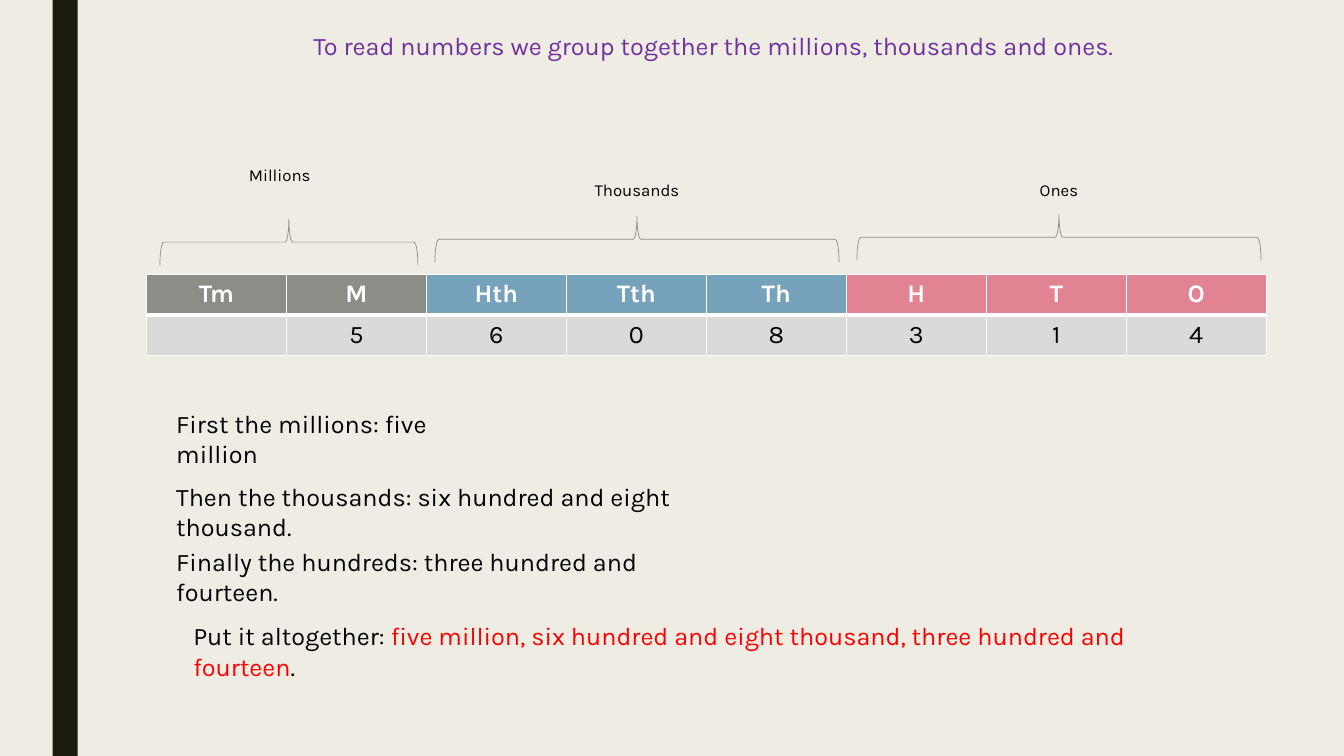
import pptx
import pptx.util
import pptx.dml.color
import pptx.enum.shapes
import pptx.enum.text
import pptx.oxml
import pptx.oxml.ns

Pt = pptx.util.Pt
Color = pptx.dml.color.RGBColor
Shape = pptx.enum.shapes.MSO_SHAPE
Align = pptx.enum.text.PP_ALIGN
Anchor = pptx.enum.text.MSO_ANCHOR

CREAM = Color(0xEF, 0xED, 0xE3)
DARK = Color(0x19, 0x1B, 0x0E)
GREY = Color(0x8C, 0x8D, 0x86)
BLUE = Color(0x77, 0xA2, 0xBB)
PINK = Color(0xE2, 0x83, 0x94)
PALE = Color(0xDA, 0xDB, 0xD9)
WHITE = Color(0xFF, 0xFF, 0xFF)
BLACK = Color(0, 0, 0)
RED = Color(0xFF, 0, 0)
PURPLE = Color(0x70, 0x30, 0xA0)


class Page:
    font = "Karla"
    size = 18

    def __init__(self, slide):
        self.slide = slide
        fill = slide.background.fill
        fill.solid()
        fill.fore_color.rgb = CREAM

    def put(self, para, text, color=BLACK, size=size, bold=False):
        """Add one styled run to a paragraph."""
        run = para.add_run()
        run.text = text
        run.font.name = self.font
        run.font.size = Pt(size)
        run.font.bold = bold
        run.font.color.rgb = color

    def text(self, left, top, width, runs, size=size, align=Align.LEFT):
        """Add one paragraph made of (text, color) runs."""
        height = size * 1.2 + 7.2
        box = self.slide.shapes.add_textbox(Pt(left), Pt(top), Pt(width), Pt(height))
        box.text_frame.word_wrap = True
        para = box.text_frame.paragraphs[0]
        para.alignment = align
        for words, color in runs:
            self.put(para, words, color, size)

    def bar(self, left, top, width, height, color):
        bar = self.slide.shapes.add_shape(
            Shape.RECTANGLE, Pt(left), Pt(top), Pt(width), Pt(height))
        bar.shadow.inherit = False
        bar.fill.solid()
        bar.fill.fore_color.rgb = color
        bar.line.fill.background()

    def brace(self, mid, top, span, depth=33.1):
        """Add a brace that opens downward, centred on mid."""
        brace = self.slide.shapes.add_shape(
            Shape.RIGHT_BRACE, Pt(mid - depth / 2), Pt(top + (depth - span) / 2),
            Pt(depth), Pt(span))
        brace.rotation = 270
        brace.shadow.inherit = False
        brace.fill.background()
        brace.line.color.rgb = GREY
        brace.line.width = Pt(0.5)

    def edges(self, cell, widths):
        """Draw white borders; widths maps L, R, T, B to points."""
        props = cell._tc.get_or_add_tcPr()
        for spot, (side, width) in enumerate(widths.items()):
            props.insert(spot, pptx.oxml.parse_xml(
                f'<a:ln{side} {pptx.oxml.ns.nsdecls("a")} w="{Pt(width)}">'
                f'<a:solidFill><a:srgbClr val="{WHITE}"/></a:solidFill></a:ln{side}>'))

    def cell(self, cell, text, fill, color, bold, widths):
        cell.fill.solid()
        cell.fill.fore_color.rgb = fill
        cell.vertical_anchor = Anchor.MIDDLE
        para = cell.text_frame.paragraphs[0]
        para.alignment = Align.CENTER
        if text:
            self.put(para, text, color, bold=bold)
        self.edges(cell, widths)

    def table(self, left, top, wide, high, columns):
        """Add a two-row table from (heading, digit, color) columns."""
        count = len(columns)
        table = self.slide.shapes.add_table(
            2, count, Pt(left), Pt(top), Pt(wide * count), Pt(high * 2)).table
        table.horz_banding = False
        for row in table.rows:
            row.height = Pt(high)
        for col, (head, digit, color) in enumerate(columns):
            table.columns[col].width = Pt(wide)
            self.cell(table.cell(0, col), head, color, WHITE, True,
                      {"L": 1, "R": 1, "T": 1, "B": 3})
            self.cell(table.cell(1, col), digit, PALE, BLACK, False,
                      {"L": 1, "R": 1, "B": 1})


def main():
    deck = pptx.Presentation()
    deck.slide_width, deck.slide_height = Pt(960), Pt(540)
    page = Page(deck.slides.add_slide(deck.slide_layouts[6]))

    page.bar(37.5, 0, 18, 540, DARK)
    page.text(150, 18, 723.6, [
        ("To read numbers we group together the millions, thousands and ones. ", PURPLE),
    ], align=Align.CENTER)

    heads = ["Tm", "M", "Hth", "Tth", "Th", "H", "T", "O"]
    colors = [GREY] * 2 + [BLUE] * 3 + [PINK] * 3
    page.table(104.6, 195.8, 100, 29.2, list(zip(heads, ["", *"5608314"], colors)))

    groups = [
        ("Millions", 118.8, 113.8, 206.4, 156.4, 184.3),
        ("Thousands", 374, 124.6, 455, 154.4, 288.7),
        ("Ones", 675.4, 124.6, 756.4, 153, 288.7),
    ]
    for name, left, top, mid, tip, span in groups:
        page.text(left, top, 162, [(name, BLACK)], size=12, align=Align.CENTER)
        page.brace(mid, tip, span)

    steps = [
        (288, 240.5, "First the millions: five million"),
        (340.4, 448.6, "Then the thousands: six hundred and eight thousand."),
        (386.8, 418.3, "Finally the hundreds: three hundred and fourteen."),
    ]
    for top, width, words in steps:
        page.text(118.8, top, width, [(words, BLACK)])
    page.text(131, 439.8, 741, [
        ("Put it altogether: ", BLACK),
        ("five million, six hundred and eight thousand, three hundred and fourteen", RED),
        (".", BLACK),
    ])
    deck.save("out.pptx")


if __name__ == "__main__":
    main()
